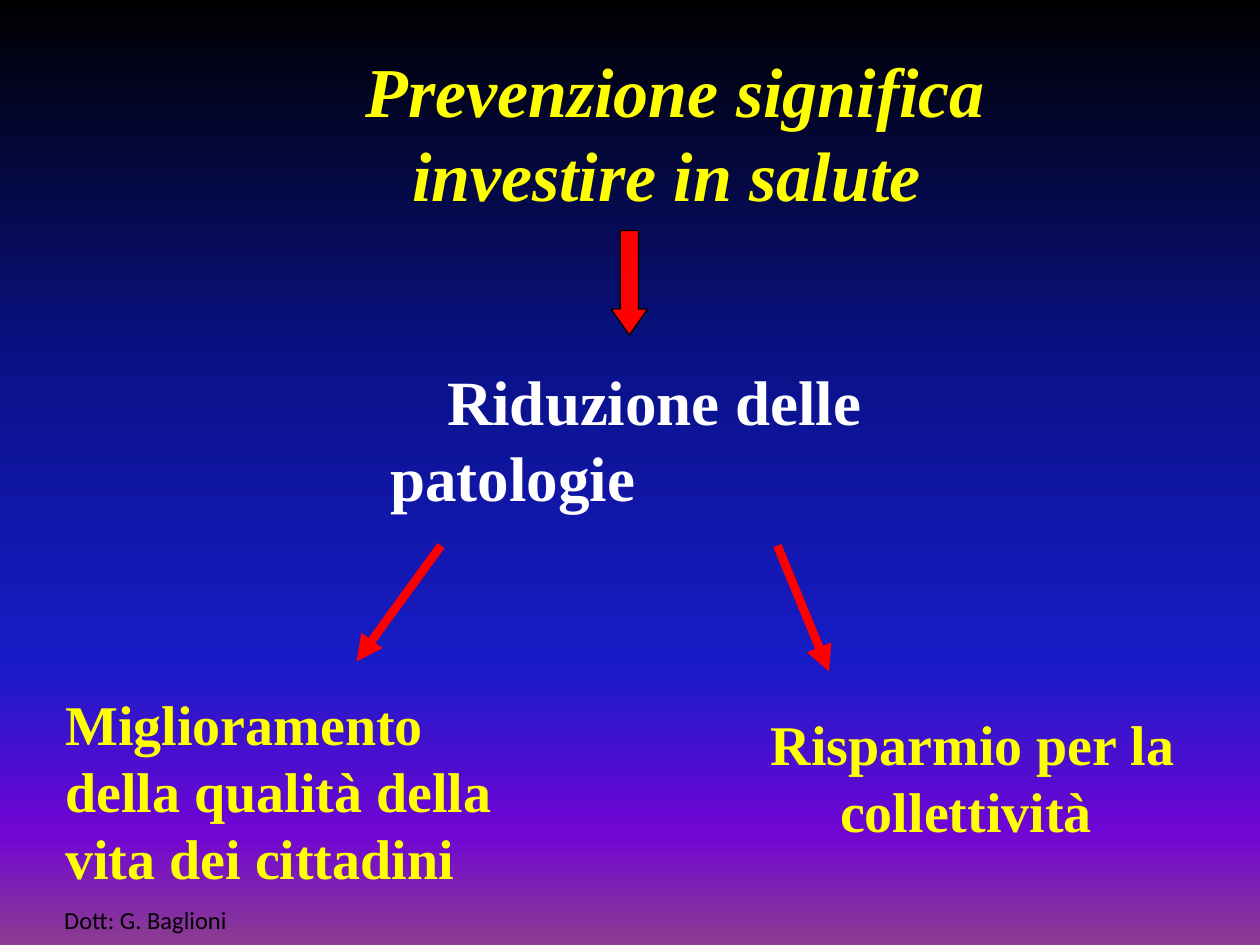
from dataclasses import dataclass

from lxml.etree import SubElement
from pptx import Presentation
from pptx.dml.color import RGBColor
from pptx.enum.shapes import MSO_CONNECTOR, MSO_SHAPE
from pptx.enum.text import MSO_ANCHOR, PP_ALIGN
from pptx.oxml.ns import qn
from pptx.util import Inches, Pt


@dataclass(frozen=True)
class Theme:
    yellow: str = "FFFF00"
    white: str = "FFFFFF"
    black: str = "000000"
    red: str = "FF0000"
    background: tuple = ((0, "000000"), (40, "0A128C"), (70, "181CC7"),
                         (88, "7005D4"), (100, "8C3D91"))
    serif: str = "Times New Roman"
    sans: str = "Calibri"
    title: int = 40
    statement: int = 36
    result: int = 32
    footer: int = 14


THEME = Theme()


def rgb(color):
    return RGBColor.from_string(color)


def set_background(slide):
    fill = slide.background.fill
    fill.gradient()
    fill.gradient_angle = 270
    stops = slide.background._cSld.find(".//" + qn("a:gsLst"))
    stops.clear()
    for percent, color in THEME.background:
        stop = SubElement(stops, qn("a:gs"), pos=str(percent * 1000))
        SubElement(stop, qn("a:srgbClr"), val=color)


def fill_text(sp, lines, size, color, font=THEME.serif, bold=True, italic=False,
              margin=0, indent=0, align=PP_ALIGN.LEFT, anchor=MSO_ANCHOR.TOP):
    """Write one paragraph; margin and indent place its first and later lines."""
    tf = sp.text_frame
    tf.word_wrap = True
    tf.vertical_anchor = anchor
    p = tf.paragraphs[0]
    p.alignment = align
    p.line_spacing = 1.0
    pPr = p._p.get_or_add_pPr()
    pPr.set("marL", str(Inches(margin)))
    pPr.set("indent", str(Inches(indent)))
    for i, line in enumerate(lines):
        if i:
            p.add_line_break()
        r = p.add_run()
        r.text = line
        r.font.name = font
        r.font.size = Pt(size)
        r.font.bold = bold
        r.font.italic = italic
        r.font.color.rgb = rgb(color)


def add_title(slide, box, lines, **style):
    sp = slide.shapes.title
    sp.left, sp.top, sp.width, sp.height = map(Inches, box)
    fill_text(sp, lines, THEME.title, THEME.yellow, **style)


def add_text(slide, box, lines, size, color, **style):
    sp = slide.shapes.add_textbox(*map(Inches, box))
    fill_text(sp, lines, size, color, **style)


def add_down_arrow(slide, box):
    sp = slide.shapes.add_shape(MSO_SHAPE.DOWN_ARROW, *map(Inches, box))
    sp.shadow.inherit = False
    sp.adjustments[1] = 0.71
    sp.fill.solid()
    sp.fill.fore_color.rgb = rgb(THEME.red)
    sp.line.color.rgb = rgb(THEME.black)
    sp.line.width = Pt(0.75)


def add_arrow(slide, start, end):
    arrow = slide.shapes.add_connector(MSO_CONNECTOR.STRAIGHT,
                                       *map(Inches, start + end))
    arrow.line.color.rgb = rgb(THEME.red)
    arrow.line.width = Pt(5)
    SubElement(arrow.line._get_or_add_ln(), qn("a:tailEnd"), type="triangle")
    SubElement(arrow._element.spPr, qn("a:effectLst"))


def main():
    prs = Presentation()
    prs.slide_width, prs.slide_height = Inches(10), Inches(7.5)
    slide = prs.slides.add_slide(prs.slide_layouts[5])
    set_background(slide)

    add_title(slide, (2.17, 0.33, 6.17, 1.43),
              ["Prevenzione significa", "investire in salute"],
              italic=True, margin=1, indent=-0.37)
    add_down_arrow(slide, (4.85, 1.83, 0.29, 0.83))
    add_text(slide, (3, 2.83, 4.83, 1.3), ["Riduzione delle", "patologie"],
             THEME.statement, THEME.white, indent=0.45)
    add_text(slide, (0.42, 5.42, 3.92, 1.7),
             ["Miglioramento della qualità della vita dei cittadini"],
             THEME.result, THEME.yellow)
    add_text(slide, (5.58, 5.58, 4, 1.17), ["Risparmio per la", "collettività"],
             THEME.result, THEME.yellow, margin=0.99, indent=-0.55)
    add_arrow(slide, (3.5, 4.33), (2.83, 5.25))
    add_arrow(slide, (6.17, 4.33), (6.58, 5.33))
    add_text(slide, (-0.43, 7.1, 3.17, 0.4), ["Dott: G. Baglioni"],
             THEME.footer, THEME.black, font=THEME.sans, bold=False,
             align=PP_ALIGN.CENTER, anchor=MSO_ANCHOR.MIDDLE)
    prs.save("out.pptx")


if __name__ == "__main__":
    main()
